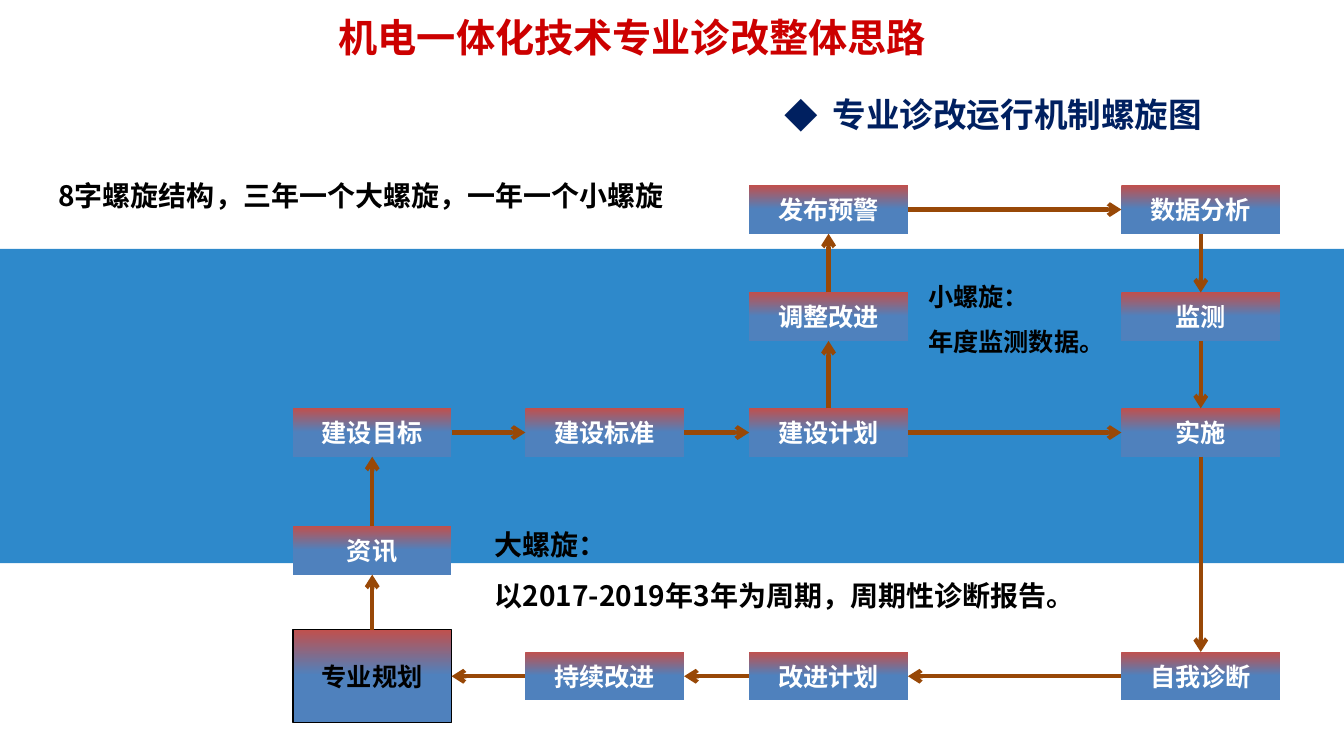
from dataclasses import dataclass

from lxml.etree import SubElement
from pptx import Presentation
from pptx.dml.color import RGBColor as RGB
from pptx.enum.shapes import MSO_CONNECTOR as Connector, MSO_SHAPE as Shape
from pptx.enum.text import MSO_ANCHOR as Anchor, PP_ALIGN as Align
from pptx.oxml.ns import qn
from pptx.util import Cm, Pt


@dataclass(frozen=True)
class Theme:
    title: RGB = RGB(0xCC, 0, 0)
    heading: RGB = RGB(0, 0x20, 0x60)
    band: RGB = RGB(0, 0x70, 0xC0)
    node_top: RGB = RGB(0xC0, 0x50, 0x4D)
    node_base: RGB = RGB(0x4F, 0x81, 0xBD)
    arrow: RGB = RGB(0x98, 0x48, 0x07)
    black: RGB = RGB(0, 0, 0)
    white: RGB = RGB(0xFF, 0xFF, 0xFF)
    font: str = "Noto Sans CJK SC"
    node_font: str = "Arial"
    start_font: str = "Calibri"
    title_size: int = 28
    heading_size: int = 24
    note_size: int = 20
    node_size: int = 18


THEME = Theme()

TITLE = "机电一体化技术专业诊改整体思路"
HEADING = "专业诊改运行机制螺旋图"
START = "专业规划"

# Text, (left, top, width, height) in cm, size, line spacing
NOTES = [
    (["8字螺旋结构，三年一个大螺旋，一年一个小螺旋"],
     (1.22, 4.37, 15.77, 1.09), THEME.note_size, None),
    (["大螺旋：", "以2017-2019年3年为周期，周期性诊断报告。"],
     (12.22, 12.75, 17.2, 3.07), THEME.note_size, 1.5),
    (["小螺旋：", "年度监测数据。"],
     (23.14, 6.58, 4.72, 2.79), THEME.node_size, 1.5),
]

COLUMNS = [7.38, 13.24, 18.88, 28.26]
ROWS = [4.67, 7.37, 10.29, 13.26, 16.43]
NODE_WIDTH, NODE_HEIGHT, START_HEIGHT = 4, 1.22, 2.34
BAND = (0, 6.27, 33.87, 7.92)

# Node: (column, row)
NODES = {
    "资讯": (0, 3), "建设目标": (0, 2), "建设标准": (1, 2), "建设计划": (2, 2),
    "持续改进": (1, 4), "改进计划": (2, 4), "自我诊断": (3, 4), "实施": (3, 2),
    "监测": (3, 1), "数据分析": (3, 0), "发布预警": (2, 0), "调整改进": (2, 1),
    START: (0, 4),
}
BIG_SPIRAL = [START, "资讯", "建设目标", "建设标准", "建设计划", "实施",
              "自我诊断", "改进计划", "持续改进", START]
SMALL_SPIRAL = ["建设计划", "调整改进", "发布预警", "数据分析", "监测", "实施"]

# Connection sites of a rectangle
TOP, LEFT, BOTTOM, RIGHT = range(4)


def write(frame, lines, *, size, color, font=THEME.font, align=Align.LEFT,
          anchor=Anchor.TOP, spacing=None, bullet=None, indent=0):
    frame.word_wrap = True
    frame.vertical_anchor = anchor
    for number, line in enumerate(lines):
        paragraph = frame.paragraphs[0] if number == 0 else frame.add_paragraph()
        paragraph.alignment = align
        if spacing:
            paragraph.line_spacing = spacing
        if bullet:
            props = paragraph._p.get_or_add_pPr()
            props.set("marL", str(Cm(indent)))
            props.set("indent", str(-Cm(indent)))
            SubElement(props, qn("a:buFont"), typeface=font)
            SubElement(props, qn("a:buChar"), char=bullet)
        run = paragraph.add_run()
        run.text = line
        run.font.size, run.font.bold, run.font.name = Pt(size), True, font
        run.font.color.rgb = color
        SubElement(run._r.get_or_add_rPr(), qn("a:ea"), typeface=THEME.font)


def add_rectangle(slide, box):
    rectangle = slide.shapes.add_shape(Shape.RECTANGLE, *map(Cm, box))
    rectangle.shadow.inherit = False
    rectangle.line.fill.background()
    return rectangle


def add_band(slide):
    band = add_rectangle(slide, BAND)
    band.fill.solid()
    band.fill.fore_color.rgb = THEME.band
    SubElement(band._element.spPr.find(".//" + qn("a:srgbClr")),
               qn("a:alpha"), val="82000")


def add_node(slide, label, column, row):
    is_start = label == START
    height = START_HEIGHT if is_start else NODE_HEIGHT
    top = ROWS[row] - (height - NODE_HEIGHT) / 2
    node = add_rectangle(slide, (COLUMNS[column], top, NODE_WIDTH, height))
    node.fill.gradient()
    node.fill.gradient_angle = 270
    stops = zip(node.fill.gradient_stops,
                [(0, THEME.node_top), (0.49, THEME.node_base)])
    for stop, (position, color) in stops:
        stop.position, stop.color.rgb = position, color
    if is_start:
        node.line.color.rgb, node.line.width = THEME.black, Pt(1)
    write(node.text_frame, [label], size=THEME.node_size,
          color=THEME.black if is_start else THEME.white,
          font=THEME.start_font if is_start else THEME.node_font,
          align=Align.CENTER, anchor=Anchor.MIDDLE)
    return node


def facing_sites(source, target):
    """Give the connection sites on the sides where two nodes face each other."""
    (column, row), (next_column, next_row) = NODES[source], NODES[target]
    if column == next_column:
        return (BOTTOM, TOP) if next_row > row else (TOP, BOTTOM)
    return (RIGHT, LEFT) if next_column > column else (LEFT, RIGHT)


def add_arrow(slide, nodes, source, target):
    leave, enter = facing_sites(source, target)
    arrow = slide.shapes.add_connector(Connector.STRAIGHT, 0, 0, 0, 0)
    arrow.begin_connect(nodes[source], leave)
    arrow.end_connect(nodes[target], enter)
    arrow.line.color.rgb, arrow.line.width = THEME.arrow, Pt(3)
    SubElement(arrow.line._get_or_add_ln(), qn("a:tailEnd"), type="arrow")
    SubElement(arrow._element.spPr, qn("a:effectLst"))


def add_text(slide, lines, box, **style):
    write(slide.shapes.add_textbox(*map(Cm, box)).text_frame, lines, **style)


def main():
    deck = Presentation()
    deck.slide_width, deck.slide_height = Cm(33.87), Cm(19.05)
    slide = deck.slides.add_slide(deck.slide_layouts[5])

    add_band(slide)
    title = slide.shapes.title
    title.left, title.top, title.width, title.height = map(
        Cm, (8.28, 0.2, 18.69, 1.45))
    write(title.text_frame, [TITLE], size=THEME.title_size, color=THEME.title)

    nodes = {label: add_node(slide, label, *cell) for label, cell in NODES.items()}
    for spiral in (BIG_SPIRAL, SMALL_SPIRAL):
        for source, target in zip(spiral, spiral[1:]):
            add_arrow(slide, nodes, source, target)

    for lines, box, size, spacing in NOTES:
        add_text(slide, lines, box, size=size, color=THEME.black, spacing=spacing)
    add_text(slide, [HEADING], (19.51, 2.24, 12.73, 2.31), size=THEME.heading_size,
             color=THEME.heading, bullet="◆", indent=1.22)
    deck.save("out.pptx")


if __name__ == "__main__":
    main()
